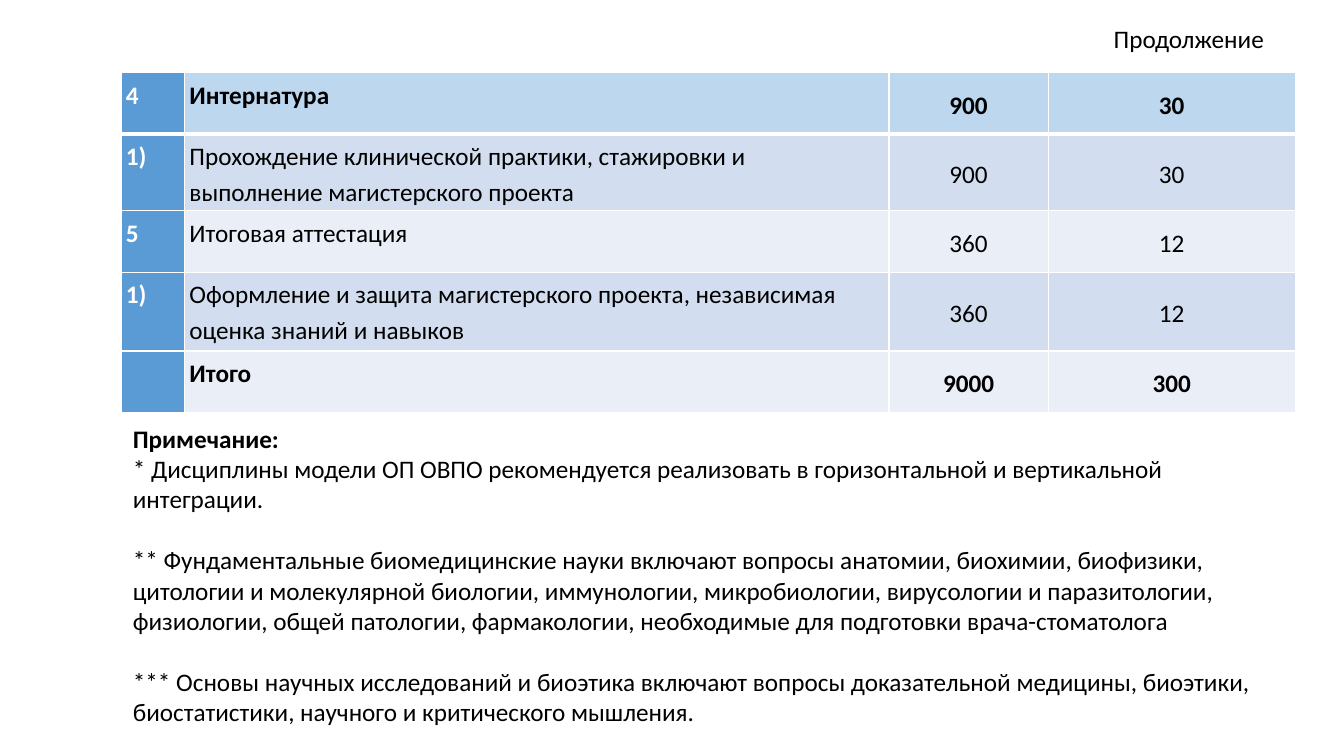
from dataclasses import dataclass

from lxml import etree
from pptx import Presentation
from pptx.dml.color import RGBColor
from pptx.enum.text import MSO_ANCHOR, MSO_AUTO_SIZE, PP_ALIGN
from pptx.oxml.ns import qn
from pptx.util import Inches, Pt

CENTER = PP_ALIGN.CENTER
LEFT = PP_ALIGN.LEFT
MIDDLE = MSO_ANCHOR.MIDDLE
TOP = MSO_ANCHOR.TOP
GROW = MSO_AUTO_SIZE.SHAPE_TO_FIT_TEXT

SLIDE_WIDTH = Inches(13.33)
SLIDE_HEIGHT = Inches(7.5)
GRID_COLUMNS = 160
GRID_ROWS = 90


@dataclass(frozen=True)
class Theme:
    font: str = "Calibri"
    size: int = 18
    text: str = "000000"
    inverse: str = "FFFFFF"
    number_fill: str = "5B9BD5"
    heading_fill: str = "BDD7EE"
    odd_fill: str = "D2DEEF"
    even_fill: str = "EAEFF7"
    border: str = "FFFFFF"
    thin: int = 1
    thick: int = 3
    cell_spacing: float = 1.15
    note_gap: int = 22


THEME = Theme()

COLUMN_WIDTHS = [7.56, 83.88, 18.96, 29.4]
ROW_HEIGHTS = [7.32, 8.88, 7.32, 9.36, 7.32]
CURRICULUM = [
    ("4", "Интернатура", "900", "30"),
    ("1)", "Прохождение клинической практики, стажировки и выполнение магистерского проекта", "900", "30"),
    ("5", "Итоговая аттестация", "360", "12"),
    ("1)", "Оформление и защита магистерского проекта, независимая оценка знаний и навыков", "360", "12"),
    ("", "Итого", "9000", "300"),
]
BOLD_ROWS = (0, len(CURRICULUM) - 1)

NOTES = [
    "Примечание:",
    "* Дисциплины модели ОП ОВПО рекомендуется реализовать в горизонтальной и вертикальной интеграции.",
    "** Фундаментальные биомедицинские науки включают вопросы анатомии, биохимии, биофизики, "
    "цитологии и молекулярной биологии, иммунологии, микробиологии, вирусологии и паразитологии, "
    "физиологии, общей патологии, фармакологии, необходимые для подготовки врача-стоматолога",
    "*** Основы научных исследований и биоэтика включают вопросы доказательной медицины, биоэтики, "
    "биостатистики, научного и критического мышления.",
]


def across(columns):
    return round(SLIDE_WIDTH * columns / GRID_COLUMNS)


def down(rows):
    return round(SLIDE_HEIGHT * rows / GRID_ROWS)


def area(left, top, width, height):
    return across(left), down(top), across(width), down(height)


def write(paragraph, text, color=THEME.text, bold=False):
    paragraph.text = text
    for run in paragraph.runs:
        run.font.name = THEME.font
        run.font.size = Pt(THEME.size)
        run.font.bold = bold
        run.font.color.rgb = RGBColor.from_string(color)


def border_cell(cell, top, bottom):
    properties = cell._tc.get_or_add_tcPr()
    sides = {"a:lnL": THEME.thin, "a:lnR": THEME.thin, "a:lnT": top, "a:lnB": bottom}
    for position, (side, width) in enumerate(sides.items()):
        line = etree.Element(qn(side), w=str(Pt(width)))
        fill = etree.SubElement(line, qn("a:solidFill"))
        etree.SubElement(fill, qn("a:srgbClr"), val=THEME.border)
        properties.insert(position, line)


def cell_fill(row, column):
    if column == 0:
        return THEME.number_fill
    if row == 0:
        return THEME.heading_fill
    return THEME.odd_fill if row % 2 else THEME.even_fill


def fill_cell(cell, row, column, text):
    cell.margin_left = cell.margin_right = Inches(0.05)
    cell.margin_top = cell.margin_bottom = Inches(0.03)
    cell.vertical_anchor = MIDDLE if column > 1 else TOP
    cell.fill.solid()
    cell.fill.fore_color.rgb = RGBColor.from_string(cell_fill(row, column))
    border_cell(
        cell,
        top=THEME.thick if row == 1 else THEME.thin,
        bottom=THEME.thick if row == 0 else THEME.thin,
    )
    paragraph = cell.text_frame.paragraphs[0]
    paragraph.alignment = CENTER if column > 1 else LEFT
    paragraph.line_spacing = THEME.cell_spacing
    color = THEME.text if column else THEME.inverse
    write(paragraph, text, color, bold=column == 0 or row in BOLD_ROWS)


def add_curriculum(slide):
    frame = slide.shapes.add_table(
        len(ROW_HEIGHTS), len(COLUMN_WIDTHS),
        *area(14.4, 8.64, sum(COLUMN_WIDTHS), sum(ROW_HEIGHTS)),
    )
    table = frame.table
    for column, width in zip(table.columns, COLUMN_WIDTHS):
        column.width = across(width)
    for row, height in zip(table.rows, ROW_HEIGHTS):
        row.height = down(height)
    for row, entries in enumerate(CURRICULUM):
        for column, text in enumerate(entries):
            fill_cell(table.cell(row, column), row, column, text)


def add_text(slide, bounds, lines, wrap=True, bold_first=False):
    frame = slide.shapes.add_textbox(*bounds).text_frame
    frame.word_wrap = wrap
    frame.auto_size = GROW
    for index, line in enumerate(lines):
        paragraph = frame.add_paragraph() if index else frame.paragraphs[0]
        write(paragraph, line, bold=bold_first and index == 0)
        if index > 1:
            paragraph.space_before = Pt(THEME.note_gap)


def main():
    presentation = Presentation()
    presentation.slide_width = SLIDE_WIDTH
    presentation.slide_height = SLIDE_HEIGHT
    slide = presentation.slides.add_slide(presentation.slide_layouts[6])
    add_curriculum(slide)
    add_text(slide, area(131.4, 2.16, 20.5, 4.8), ["Продолжение"], wrap=False)
    add_text(slide, area(14.64, 49.8, 139.8, 40), NOTES, bold_first=True)
    presentation.save("out.pptx")


if __name__ == "__main__":
    main()
